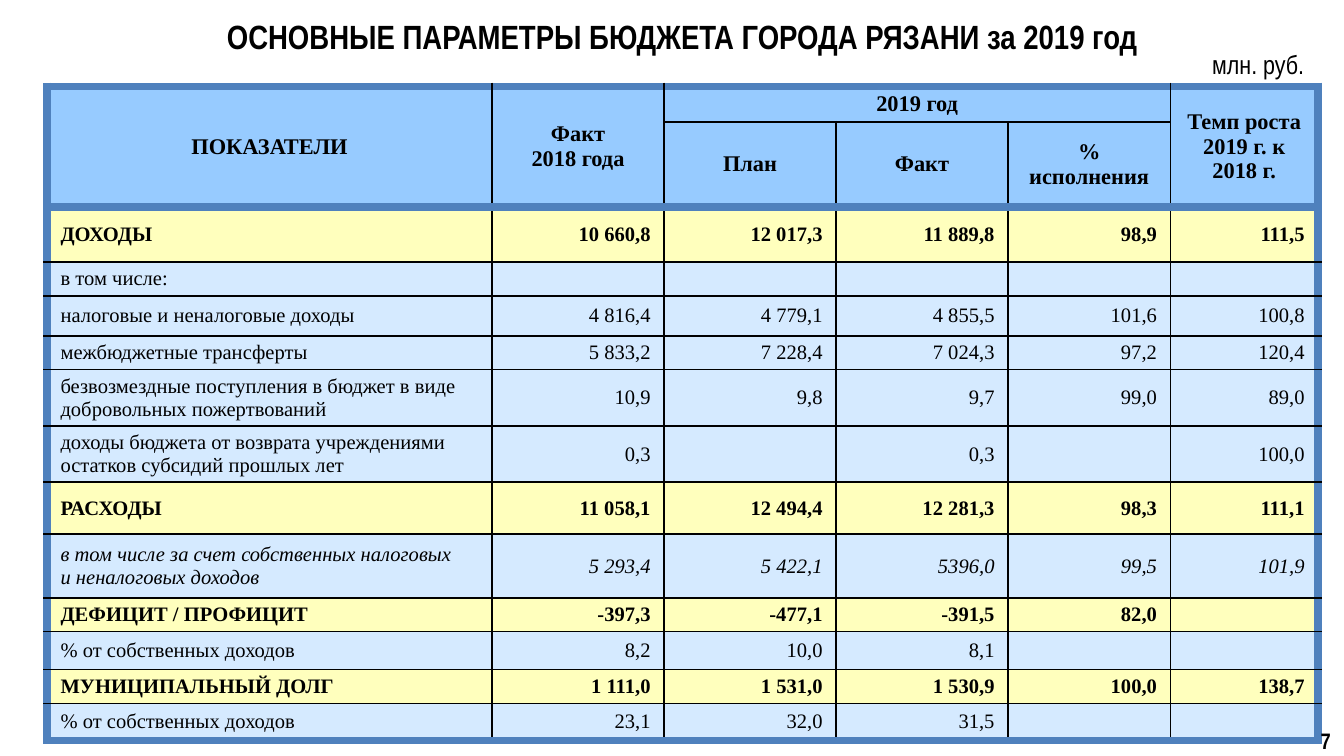
from dataclasses import dataclass

from lxml import etree
from pptx import Presentation
from pptx.dml.color import RGBColor
from pptx.enum.text import MSO_ANCHOR, PP_ALIGN
from pptx.oxml.ns import qn
from pptx.util import Cm, Pt

LEFT, CENTER, RIGHT = PP_ALIGN.LEFT, PP_ALIGN.CENTER, PP_ALIGN.RIGHT
MIDDLE, TOP = MSO_ANCHOR.MIDDLE, MSO_ANCHOR.TOP

BLACK = RGBColor(0x00, 0x00, 0x00)
FRAME_BLUE = RGBColor(0x4F, 0x81, 0xBD)
HEADER_BLUE = RGBColor(0x97, 0xCB, 0xFF)
TOTAL_YELLOW = RGBColor(0xFF, 0xFF, 0xBD)
DETAIL_BLUE = RGBColor(0xD5, 0xEA, 0xFF)

TITLE_FONT = "Arial Narrow"
TABLE_FONT = "Times New Roman"
COLUMN_WIDTHS = (8.41, 3.25, 3.25, 3.25, 3.07, 2.79)
HEADER_HEIGHTS = (0.66, 1.6)


@dataclass
class Style:
    size: float
    font: str = TABLE_FONT
    bold: bool = False
    italic: bool = False


@dataclass
class HeaderCell:
    row: int
    column: int
    text: str
    row_span: int = 1
    column_span: int = 1
    anchor: MSO_ANCHOR = MIDDLE


@dataclass
class BudgetRow:
    height: float
    label: str
    values: tuple
    total: bool = False
    italic: bool = False


HEADER_CELLS = (
    HeaderCell(0, 0, "ПОКАЗАТЕЛИ", row_span=2),
    HeaderCell(0, 1, "Факт\n2018 года", row_span=2),
    HeaderCell(0, 2, "2019 год", column_span=3, anchor=TOP),
    HeaderCell(0, 5, "Темп роста 2019 г. к 2018 г.", row_span=2),
    HeaderCell(1, 2, "План"),
    HeaderCell(1, 3, "Факт"),
    HeaderCell(1, 4, "% исполнения"),
)

BUDGET_ROWS = (
    BudgetRow(1.04, "ДОХОДЫ", ("10 660,8", "12 017,3", "11 889,8", "98,9", "111,5"), total=True),
    BudgetRow(0.64, "в том числе:", ("", "", "", "", "")),
    BudgetRow(0.76, "налоговые и неналоговые доходы",
              ("4 816,4", "4 779,1", "4 855,5", "101,6", "100,8")),
    BudgetRow(0.62, "межбюджетные трансферты",
              ("5 833,2", "7 228,4", "7 024,3", "97,2", "120,4")),
    BudgetRow(1.06, "безвозмездные поступления в бюджет в виде добровольных пожертвований",
              ("10,9", "9,8", "9,7", "99,0", "89,0")),
    BudgetRow(1.04, "доходы бюджета от возврата учреждениями остатков субсидий прошлых лет",
              ("0,3", "", "0,3", "", "100,0")),
    BudgetRow(0.98, "РАСХОДЫ", ("11 058,1", "12 494,4", "12 281,3", "98,3", "111,1"), total=True),
    BudgetRow(1.21, "в том числе за счет собственных налоговых\nи неналоговых доходов",
              ("5 293,4", "5 422,1", "5396,0", "99,5", "101,9"), italic=True),
    BudgetRow(0.62, "ДЕФИЦИТ / ПРОФИЦИТ", ("-397,3", "-477,1", "-391,5", "82,0", ""), total=True),
    BudgetRow(0.72, "% от собственных доходов", ("8,2", "10,0", "8,1", "", "")),
    BudgetRow(0.64, "МУНИЦИПАЛЬНЫЙ ДОЛГ",
              ("1 111,0", "1 531,0", "1 530,9", "100,0", "138,7"), total=True),
    BudgetRow(0.7, "% от собственных доходов", ("23,1", "32,0", "31,5", "", "")),
)


def format_text(text_frame, style: Style, alignment) -> None:
    for paragraph in text_frame.paragraphs:
        paragraph.alignment = alignment
        font = paragraph.font
        font.name, font.size = style.font, Pt(style.size)
        font.bold, font.italic = style.bold, style.italic
        font.color.rgb = BLACK
        if not paragraph.runs:
            # An empty cell takes its line height from the end mark
            end_mark = paragraph._p.get_or_add_endParaRPr()
            end_mark.set("sz", str(int(style.size * 100)))


def fill_cell(cell, text: str, style: Style, alignment, color: RGBColor, anchor=MIDDLE) -> None:
    cell.text = text
    cell.vertical_anchor = anchor
    cell.margin_top = cell.margin_bottom = Cm(0.1)
    cell.fill.solid()
    cell.fill.fore_color.rgb = color
    format_text(cell.text_frame, style, alignment)


def draw_border(cell, side: str, color: RGBColor, width: float) -> None:
    properties = cell._tc.get_or_add_tcPr()
    line = etree.SubElement(properties, qn(f"a:ln{side}"), w=str(Pt(width)))
    solid = etree.SubElement(line, qn("a:solidFill"))
    etree.SubElement(solid, qn("a:srgbClr"), val=str(color))


def draw_borders(table) -> None:
    last_row, last_column = len(table.rows) - 1, len(table.columns) - 1
    header_end = len(HEADER_HEIGHTS) - 1
    for row in range(last_row + 1):
        for column in range(last_column + 1):
            cell = table.cell(row, column)
            bottom_row = row + cell.span_height - 1 if cell.is_merge_origin else row
            framed = {
                "L": column == 0,
                "R": column == last_column,
                "T": row in (0, header_end + 1),
                "B": bottom_row in (header_end, last_row),
            }
            # Leave out edges inside merged cells
            if cell.is_spanned:
                for side in ("LR" if row == 0 else "T"):
                    del framed[side]
            for side, is_frame in framed.items():
                draw_border(cell, side, *((FRAME_BLUE, 4.5) if is_frame else (BLACK, 1)))


def add_budget_table(slide) -> None:
    heights = HEADER_HEIGHTS + tuple(row.height for row in BUDGET_ROWS)
    table = slide.shapes.add_table(
        len(heights), len(COLUMN_WIDTHS), Cm(0.89), Cm(1.63),
        Cm(sum(COLUMN_WIDTHS)), Cm(sum(heights))).table
    table.first_row = table.horz_banding = False
    for column, width in zip(table.columns, COLUMN_WIDTHS):
        column.width = Cm(width)
    for row, height in zip(table.rows, heights):
        row.height = Cm(height)

    # Merged header cells, then borders, which precede the fills
    for header in HEADER_CELLS:
        if header.row_span > 1 or header.column_span > 1:
            table.cell(header.row, header.column).merge(table.cell(
                header.row + header.row_span - 1, header.column + header.column_span - 1))
    draw_borders(table)

    for header in HEADER_CELLS:
        fill_cell(table.cell(header.row, header.column), header.text,
                  Style(12, bold=True), CENTER, HEADER_BLUE, header.anchor)
    for row_index, row in enumerate(BUDGET_ROWS, start=len(HEADER_HEIGHTS)):
        style = Style(11, bold=row.total, italic=row.italic)
        color = TOTAL_YELLOW if row.total else DETAIL_BLUE
        for column_index, text in enumerate((row.label, *row.values)):
            fill_cell(table.cell(row_index, column_index), text, style,
                      RIGHT if column_index else LEFT, color)


def add_label(slide, text: str, box: tuple, style: Style, anchor=TOP) -> None:
    shape = slide.shapes.add_textbox(*(Cm(length) for length in box))
    shape.text_frame.word_wrap = True
    shape.text_frame.vertical_anchor = anchor
    shape.text_frame.text = text
    format_text(shape.text_frame, style, RIGHT)


def main() -> None:
    presentation = Presentation()
    presentation.slide_width, presentation.slide_height = Cm(25.4), Cm(14.29)
    slide = presentation.slides.add_slide(presentation.slide_layouts[5])

    # Title
    title = slide.shapes.title
    title.left, title.top, title.width, title.height = Cm(1.3), Cm(0.23), Cm(23.19), Cm(0.89)
    title.text_frame.text = "ОСНОВНЫЕ ПАРАМЕТРЫ БЮДЖЕТА ГОРОДА РЯЗАНИ за 2019 год"
    title.text_frame.vertical_anchor = MIDDLE
    format_text(title.text_frame, Style(18, TITLE_FONT, bold=True), CENTER)

    # Table, unit of measure and page number
    add_budget_table(slide)
    add_label(slide, "млн. руб.", (22.3, 0.79, 2.6, 0.86), Style(14, TITLE_FONT))
    add_label(slide, "7", (24.41, 13.69, 0.99, 0.6), Style(12, TITLE_FONT, bold=True), MIDDLE)

    presentation.save("out.pptx")


if __name__ == "__main__":
    main()
